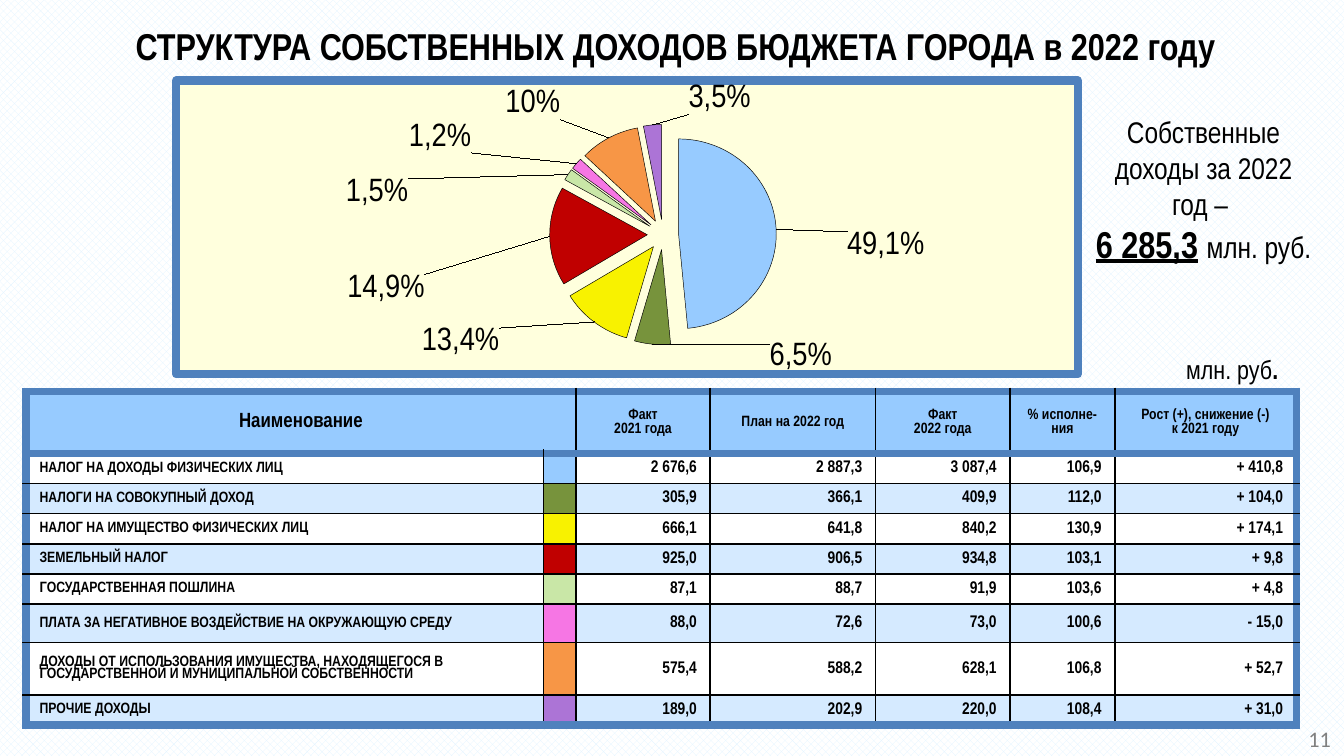
"""Build a slide on the structure of the city budget's own revenues in 2022."""
from lxml import etree
from pptx import Presentation
from pptx import util as u
from pptx.chart import data as chart_data
from pptx.dml import color
from pptx.enum import chart as chart_enum, dml, text
from pptx.oxml import ns, parse_xml

BLUE, SKY, PALE, CREAM, BLACK, WHITE = "4F81BD", "97CBFF", "D5EAFF", "FFFFDD", "000000", "FFFFFF"
LEFT, CENTER, RIGHT = text.PP_ALIGN.LEFT, text.PP_ALIGN.CENTER, text.PP_ALIGN.RIGHT


def paint(fill, hex_color):
    fill.solid()
    fill.fore_color.rgb = color.RGBColor.from_string(hex_color)


def write(paragraph, content, size, alignment=CENTER, hex_color=BLACK, **extra):
    paragraph.alignment = alignment
    run = paragraph.add_run()
    run.text = content
    for name, value in {"name": "Arial Narrow", "size": u.Pt(size), "bold": False, **extra}.items():
        setattr(run.font, name, value)
    paint(run.font.fill, hex_color)


presentation = Presentation()
presentation.slide_width, presentation.slide_height = u.Pt(720), u.Pt(405)
slide = presentation.slides.add_slide(presentation.slide_layouts[5])
background = slide.background.fill
background.patterned()
background.pattern = dml.MSO_PATTERN.LARGE_CHECKER_BOARD
background.fore_color.rgb = color.RGBColor.from_string("E1F4FF")
background.back_color.rgb = color.RGBColor.from_string(WHITE)

title = slide.shapes.title
for name, value in {"left": 14, "top": 6.7, "width": 696, "height": 31}.items():
    setattr(title, name, u.Pt(value))
title.text_frame.vertical_anchor = text.MSO_ANCHOR.MIDDLE
heading = title.text_frame.paragraphs[0]
heading.line_spacing = 1.2
write(heading, "СТРУКТУРА СОБСТВЕННЫХ ДОХОДОВ БЮДЖЕТА ГОРОДА в 2022 году", 20, bold=True)

revenues = [
    ("НАЛОГ НА ДОХОДЫ ФИЗИЧЕСКИХ ЛИЦ", SKY, "2 676,6", "2 887,3", "3 087,4", "106,9", "+ 410,8"),
    ("НАЛОГИ НА СОВОКУПНЫЙ ДОХОД", "77933C", "305,9", "366,1", "409,9", "112,0", "+ 104,0"),
    ("НАЛОГ НА ИМУЩЕСТВО ФИЗИЧЕСКИХ ЛИЦ", "F8F200", "666,1", "641,8", "840,2", "130,9", "+ 174,1"),
    ("ЗЕМЕЛЬНЫЙ НАЛОГ", "C00000", "925,0", "906,5", "934,8", "103,1", "+ 9,8"),
    ("ГОСУДАРСТВЕННАЯ ПОШЛИНА", "C9E7A7", "87,1", "88,7", "91,9", "103,6", "+ 4,8"),
    ("ПЛАТА ЗА НЕГАТИВНОЕ ВОЗДЕЙСТВИЕ НА ОКРУЖАЮЩУЮ СРЕДУ", "F676E4",
     "88,0", "72,6", "73,0", "100,6", "- 15,0"),
    ("ДОХОДЫ ОТ ИСПОЛЬЗОВАНИЯ ИМУЩЕСТВА, НАХОДЯЩЕГОСЯ В ГОСУДАРСТВЕННОЙ И МУНИЦИПАЛЬНОЙ СОБСТВЕННОСТИ",
     "F79646", "575,4", "588,2", "628,1", "106,8", "+ 52,7"),
    ("ПРОЧИЕ ДОХОДЫ", "AC74D6", "189,0", "202,9", "220,0", "108,4", "+ 31,0"),
]
headers = ["Наименование", "", "Факт\n2021 года", "План на 2022 год", "Факт\n2022 года",
           "% исполне-ния", "Рост (+), снижение (-)\nк 2021 году"]
shares = [49, 6, 12, 17, 2, 2, 10, 3]
labels = [("49,1%", 0.07, 0.06), ("6,5%", 0.2, -0.03), ("13,4%", -0.1, 0), ("14,9%", -0.13, 0.18),
          ("1,5%", -0.17, 0.13), ("1,2%", -0.11, -0.02), ("10%", -0.05, -0.04), ("3,5%", 0.11, -0.01)]

pie_data = chart_data.CategoryChartData()
pie_data.categories = [str(number) for number in range(1, 9)]
pie_data.add_series("Series 1", shares)
chart = slide.shapes.add_chart(chart_enum.XL_CHART_TYPE.PIE, u.Pt(92.2), u.Pt(41), u.Pt(487.4),
                               u.Pt(163.4), pie_data).chart
chart.has_legend = chart.has_title = False
chart.font.name, chart.font.size = "Arial Narrow", u.Pt(18)
paint(chart.font.fill, BLACK)
chart.plots[0].vary_by_categories = True
series = chart.plots[0].series[0]
paint(series.format.line.fill, BLACK)
series.format.line.width = u.Pt(0.75)
explosion = etree.Element(ns.qn("c:explosion"), val="16")
series.format.line._get_or_add_ln().getparent().addnext(explosion)
for index, (revenue, (caption, shift_x, shift_y)) in enumerate(zip(revenues, labels)):
    point = series.points[index]
    paint(point.format.fill, revenue[1])
    paint(point.format.line.fill, BLACK)
    point.format.line.width = u.Pt(0.25)
    label = point.data_label
    write(label.text_frame.paragraphs[0], caption, 18)
    label.position = chart_enum.XL_LABEL_POSITION.OUTSIDE_END
    layout = parse_xml(f'<c:layout {ns.nsdecls("c")}><c:manualLayout><c:x val="{shift_x}"/>'
                       f'<c:y val="{shift_y}"/></c:manualLayout></c:layout>')
    label._dLbl.find(ns.qn("c:idx")).addnext(layout)

plot_area = chart.element.find(".//" + ns.qn("c:plotArea"))
for old_layout in plot_area.findall(ns.qn("c:layout")):
    plot_area.remove(old_layout)
plot_area.insert(0, parse_xml(
    f'<c:layout {ns.nsdecls("c")}><c:manualLayout><c:layoutTarget val="inner"/><c:xMode val="edge"/>'
    '<c:yMode val="edge"/><c:x val="0.08"/><c:y val="0.15"/><c:w val="0.92"/><c:h val="0.75"/>'
    '</c:manualLayout></c:layout>'))
cream_fill = f'<a:solidFill><a:srgbClr val="{CREAM}"/></a:solidFill>'
plot_area.append(parse_xml(f'<c:spPr {ns.nsdecls("c", "a")}>{cream_fill}</c:spPr>'))
chart.element.find(ns.qn("c:chart")).addnext(parse_xml(
    f'<c:spPr {ns.nsdecls("c", "a")}>{cream_fill}<a:ln w="{u.Pt(4.5)}"><a:solidFill>'
    f'<a:srgbClr val="{BLUE}"/></a:solidFill></a:ln></c:spPr>'))

widths = [277.2, 17.3, 72, 88.6, 72, 56.2, 97.2]
heights = [33.2] + [16.2] * 5 + [20.6, 28, 16.2]
table = slide.shapes.add_table(9, 7, u.Pt(14), u.Pt(209.6), u.Pt(sum(widths)), u.Pt(sum(heights))).table
table.first_row = table.horz_banding = False
for column, width in zip(table.columns, widths):
    column.width = u.Pt(width)
for row, height in zip(table.rows, heights):
    row.height = u.Pt(height)
table.cell(0, 0).merge(table.cell(0, 1))

for row_index, values in enumerate([headers] + revenues):
    for column_index, value in enumerate(values):
        cell = table.cell(row_index, column_index)
        is_header, is_name, is_swatch = row_index == 0, column_index == 0, column_index == 1
        margin = 2.9 if is_header else 0.7
        for name, points in {"left": 7.2, "right": 7.2, "top": margin, "bottom": margin}.items():
            setattr(cell, "margin_" + name, u.Pt(points))
        cell.vertical_anchor = text.MSO_ANCHOR.MIDDLE
        row_fill = SKY if is_header else WHITE if row_index % 2 else PALE
        paint(cell.fill, value if is_swatch and not is_header else row_fill)
        if is_swatch:
            etree.SubElement(cell.text_frame.paragraphs[0]._p, ns.qn("a:endParaRPr"), sz="800")
        else:
            size = (11 if is_name else 8) if is_header else 8 if is_name else 9
            alignment = CENTER if is_header else LEFT if is_name else RIGHT
            for line_index, line in enumerate(value.split("\n")):
                frame = cell.text_frame
                paragraph = frame.add_paragraph() if line_index else frame.paragraphs[0]
                paragraph.line_spacing = 0.9 if is_name and not is_header else 1.0
                write(paragraph, line, size, alignment, bold=True)
        thick_sides = {"L": is_name, "R": column_index == 6, "T": row_index < 2, "B": row_index in (0, 8)}
        for position, (side, thick) in enumerate(thick_sides.items()):
            cell._tc.get_or_add_tcPr().insert(position, parse_xml(
                f'<a:ln{side} {ns.nsdecls("a")} w="{u.Pt(4.5 if thick else 1)}"><a:solidFill>'
                f'<a:srgbClr val="{BLUE if thick else BLACK}"/></a:solidFill></a:ln{side}>'))

notes = [
    ((579.6, 57.6, 130.3, 90), CENTER, [
        [("Собственные доходы за 2022 год – ", 16, {})],
        [("6 285,3", 20, {"bold": True, "underline": True}), (" ", 20, {"bold": True}),
         ("млн. руб.", 16, {})]]),
    ((586.8, 185.8, 105.1, 24.5), RIGHT, [[("млн. руб", 14, {}), (".", 14, {"bold": True})]]),
    ((679.7, 385.2, 40.3, 18.7), RIGHT, [[("11", 11.9, {"name": "Calibri", "hex_color": "808080"})]]),
]
for box, alignment, paragraphs in notes:
    frame = slide.shapes.add_textbox(*map(u.Pt, box)).text_frame
    frame.word_wrap = True
    for index, runs in enumerate(paragraphs):
        paragraph = frame.add_paragraph() if index else frame.paragraphs[0]
        for content, size, extra in runs:
            write(paragraph, content, size, alignment, **extra)

presentation.save("out.pptx")
